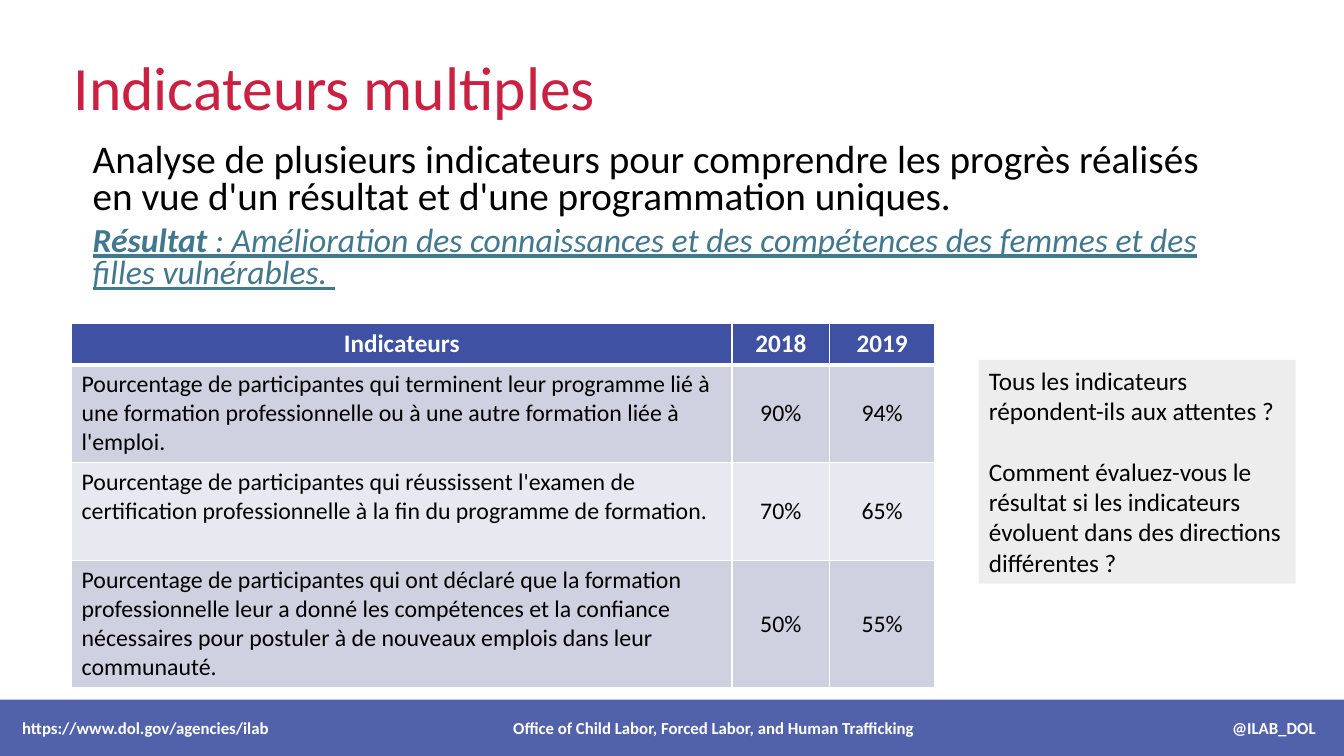
import pptx
import pptx.dml.color
import pptx.enum.shapes
import pptx.enum.text
import pptx.oxml
import pptx.oxml.ns
import pptx.util
from pptx.util import Inches

FONT = "Calibri"
COLORS = {
    "title": "CB2042",
    "result": "41788D",
    "band": "3F51A2",
    "odd_row": "CFD0E0",
    "even_row": "E8E9F0",
    "question": "EDEDED",
    "black": "000000",
    "white": "FFFFFF",
}
ALIGN = pptx.enum.text.PP_ALIGN
ANCHOR = pptx.enum.text.MSO_ANCHOR
COLUMN_WIDTHS = (6.55, 0.97, 1.04)
ROW_HEIGHTS = (0.41, 0.97, 0.97, 1.26)
INDICATORS = (
    ("Indicateurs", "2018", "2019"),
    ("Pourcentage de participantes qui terminent leur programme lié à une formation "
     "professionnelle ou à une autre formation liée à l'emploi.", "90%", "94%"),
    ("Pourcentage de participantes qui réussissent l'examen de certification "
     "professionnelle à la fin du programme de formation.", "70%", "65%"),
    ("Pourcentage de participantes qui ont déclaré que la formation professionnelle "
     "leur a donné les compétences et la confiance nécessaires pour postuler à de "
     "nouveaux emplois dans leur communauté.", "50%", "55%"),
)


def rgb(name):
    """Return the named colour."""
    return pptx.dml.color.RGBColor.from_string(COLORS[name])


def add_span(para, text, size, color="black", bold=False, italic=False, underline=False):
    """Append one formatted run to a paragraph."""
    span = para.add_run()
    span.text = text
    font = span.font
    font.name, font.size = FONT, pptx.util.Pt(size)
    font.bold, font.italic, font.underline = bold, italic, underline
    font.color.rgb = rgb(color)


def add_panel(page, box, color):
    """Add a plain filled rectangle and return it."""
    panel = page.shapes.add_shape(
        pptx.enum.shapes.MSO_SHAPE.RECTANGLE, *map(Inches, box))
    panel.shadow.inherit = False
    panel.fill.solid()
    panel.fill.fore_color.rgb = rgb(color)
    panel.line.fill.background()
    panel.text_frame.word_wrap = True
    return panel


def add_title(page, box):
    """Place and format the title placeholder."""
    title = page.shapes.title
    title.left, title.top, title.width, title.height = map(Inches, box)
    frame = title.text_frame
    frame.vertical_anchor = ANCHOR.MIDDLE
    para = frame.paragraphs[0]
    para.alignment, para.line_spacing = ALIGN.LEFT, 0.9
    add_span(para, "Indicateurs multiples", 44, "title")


def add_introduction(page, box):
    """Add the explanation and the underlined result."""
    frame = page.shapes.add_textbox(*map(Inches, box)).text_frame
    frame.word_wrap = True
    frame.margin_left = Inches(0.21)
    analysis, result = frame.paragraphs[0], frame.add_paragraph()
    for para in (analysis, result):
        para.line_spacing, para.space_before = 0.8, pptx.util.Pt(6)
    add_span(analysis, "Analyse de plusieurs indicateurs pour comprendre les progrès "
             "réalisés en vue d'un résultat et d'une programmation uniques.", 28)
    add_span(result, "Résultat ", 24, "result", True, True, True)
    add_span(result, ": Amélioration des connaissances et des compétences des femmes "
             "et des filles vulnérables. ", 24, "result", False, True, True)


def set_borders(cell, bottom):
    """Draw white cell borders with the given bottom width in points."""
    properties = cell._tc.get_or_add_tcPr()
    widths = (("lnL", 1), ("lnR", 1), ("lnT", 1), ("lnB", bottom))
    for index, (side, width) in enumerate(widths):
        properties.insert(index, pptx.oxml.parse_xml(
            f'<a:{side} {pptx.oxml.ns.nsdecls("a")} w="{pptx.util.Pt(width)}">'
            f'<a:solidFill><a:srgbClr val="{COLORS["white"]}"/></a:solidFill></a:{side}>'))


def add_indicators(page, box):
    """Add the table of indicators by year."""
    table = page.shapes.add_table(
        len(ROW_HEIGHTS), len(COLUMN_WIDTHS), *map(Inches, box)).table
    for column, width in zip(table.columns, COLUMN_WIDTHS):
        column.width = Inches(width)
    for row, height in zip(table.rows, ROW_HEIGHTS):
        row.height = Inches(height)
    for row, texts in enumerate(INDICATORS):
        header = row == 0
        fill = "band" if header else ("even_row", "odd_row")[row % 2]
        for column, text in enumerate(texts):
            cell = table.cell(row, column)
            centred = header or column > 0
            cell.fill.solid()
            cell.fill.fore_color.rgb = rgb(fill)
            cell.vertical_anchor = ANCHOR.MIDDLE if centred else ANCHOR.TOP
            para = cell.text_frame.paragraphs[0]
            para.alignment = ALIGN.CENTER if centred else ALIGN.LEFT
            add_span(para, text, 18 if header else 17,
                     "white" if header else "black", bold=header)
            set_borders(cell, 3 if header else 1)


def add_questions(page, box):
    """Add the grey panel of discussion questions."""
    frame = add_panel(page, box, "question").text_frame
    frame.vertical_anchor = ANCHOR.TOP
    first, second = frame.paragraphs[0], frame.add_paragraph()
    second.space_before = pptx.util.Pt(22)
    first.alignment = second.alignment = ALIGN.LEFT
    add_span(first, "Tous les indicateurs répondent-ils aux attentes ?", 18)
    add_span(second, "Comment évaluez-vous le résultat si les indicateurs évoluent "
             "dans des directions différentes ?", 18)


def add_footer(page, box):
    """Add the translucent band with left, centre and right texts."""
    band = add_panel(page, box, "band")
    color = band.fill._xPr.find(".//" + pptx.oxml.ns.qn("a:srgbClr"))
    color.append(pptx.oxml.parse_xml(
        f'<a:alpha {pptx.oxml.ns.nsdecls("a")} val="90000"/>'))
    frame = band.text_frame
    frame.margin_left = Inches(0.22)
    frame.vertical_anchor = ANCHOR.MIDDLE
    para = frame.paragraphs[0]
    para.alignment = ALIGN.LEFT
    para._p.get_or_add_pPr().append(pptx.oxml.parse_xml(
        f'<a:tabLst {pptx.oxml.ns.nsdecls("a")}>'
        f'<a:tab pos="{Inches(6.86)}" algn="ctr"/>'
        f'<a:tab pos="{Inches(12.83)}" algn="r"/></a:tabLst>'))
    for text in ("https://www.dol.gov/agencies/ilab",
                 "\tOffice of Child Labor, Forced Labor, and Human Trafficking",
                 "\t@ILAB_DOL"):
        add_span(para, text, 12, "white", bold=True)


def main():
    """Build the slide and save it."""
    deck = pptx.Presentation()
    deck.slide_width, deck.slide_height = Inches(13.33), Inches(7.5)
    page = deck.slides.add_slide(deck.slide_layouts.get_by_name("Title Only"))
    add_title(page, (0.63, 0.17, 11.5, 1.45))
    add_introduction(page, (0.71, 1.37, 11.5, 1.7))
    add_indicators(page, (0.71, 3.21, sum(COLUMN_WIDTHS), sum(ROW_HEIGHTS)))
    add_questions(page, (9.71, 3.57, 3.14, 2.22))
    add_footer(page, (0, 6.94, 13.33, 0.56))
    deck.save("out.pptx")


if __name__ == "__main__":
    main()
